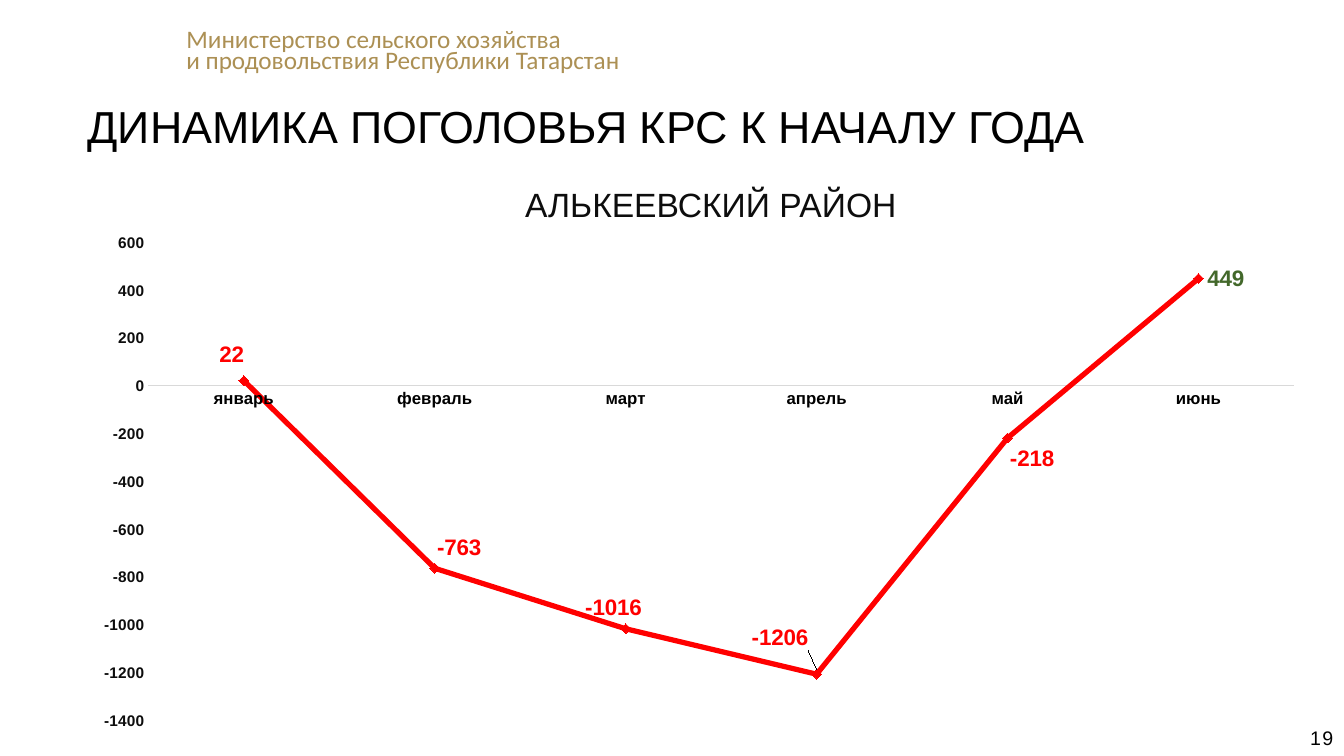
from dataclasses import dataclass

from lxml.etree import SubElement
from pptx import Presentation
from pptx.chart.chart import Chart
from pptx.chart.data import CategoryChartData
from pptx.dml.color import RGBColor
from pptx.enum.chart import (XL_CHART_TYPE, XL_LABEL_POSITION, XL_MARKER_STYLE,
                             XL_TICK_MARK)
from pptx.enum.text import MSO_AUTO_SIZE, PP_ALIGN
from pptx.oxml import parse_xml
from pptx.oxml.ns import nsdecls, qn
from pptx.slide import Slide
from pptx.text.text import Font
from pptx.util import Inches, Pt

BLACK = RGBColor(0x00, 0x00, 0x00)
NEAR_BLACK = RGBColor(0x0D, 0x0D, 0x0D)
GOLD = RGBColor(0xAC, 0x90, 0x54)
RED = RGBColor(0xFF, 0x00, 0x00)
GREEN = RGBColor(0x43, 0x68, 0x2B)
AXIS_GREY = RGBColor(0xD9, 0xD9, 0xD9)


@dataclass
class Caption:
    text: str
    left: float
    top: float
    width: float
    height: float
    size: int
    color: RGBColor
    font: str = "Arial"
    align: PP_ALIGN = PP_ALIGN.LEFT
    wrap: bool = True
    grow: bool = True
    inset: bool = True
    line_spacing: float = 1.0
    indent: float = 0.0
    tracking: int = 0


@dataclass
class Month:
    name: str
    change: int
    label_position: XL_LABEL_POSITION
    shift_x: float = 0.0
    shift_y: float = 0.0
    color: RGBColor = RED


CAPTIONS = [
    Caption("Министерство сельского хозяйства\nи продовольствия Республики Татарстан",
            1.75, 0.26, 4.55, 0.54, 18, GOLD, font="Calibri", wrap=False,
            line_spacing=0.7),
    Caption("ДИНАМИКА ПОГОЛОВЬЯ КРС К НАЧАЛУ ГОДА",
            0.58, 0.93, 12.75, 0.64, 32, BLACK, indent=0.19),
    Caption("АЛЬКЕЕВСКИЙ РАЙОН", 0.58, 1.78, 12.75, 0.5, 24, NEAR_BLACK,
            align=PP_ALIGN.CENTER, indent=0.19),
    Caption("19", 12.98, 7.2, 0.26, 0.23, 14, BLACK, align=PP_ALIGN.CENTER,
            wrap=False, grow=False, inset=False, tracking=100),
]

ABOVE, BELOW = XL_LABEL_POSITION.ABOVE, XL_LABEL_POSITION.BELOW
# Label shifts are fractions of the chart's width and height
MONTHS = [
    Month("январь", 22, ABOVE, -0.01, -0.01),
    Month("февраль", -763, ABOVE, 0.02),
    Month("март", -1016, ABOVE, -0.01),
    Month("апрель", -1206, ABOVE, -0.03, -0.03),
    Month("май", -218, BELOW, 0.02),
    Month("июнь", 449, XL_LABEL_POSITION.RIGHT, color=GREEN),
]


def style_font(font: Font, size: int, color: RGBColor, bold: bool = False,
               name: str = "Arial") -> None:
    font.name = name
    font.size = Pt(size)
    font.bold = bold
    font.color.rgb = color


def add_caption(slide: Slide, caption: Caption) -> None:
    box = slide.shapes.add_textbox(Inches(caption.left), Inches(caption.top),
                                   Inches(caption.width), Inches(caption.height))
    frame = box.text_frame
    frame.word_wrap = caption.wrap
    frame.auto_size = (MSO_AUTO_SIZE.SHAPE_TO_FIT_TEXT if caption.grow
                       else MSO_AUTO_SIZE.NONE)
    if not caption.inset:
        frame.margin_left = frame.margin_right = Inches(0)
        frame.margin_top = frame.margin_bottom = Inches(0)
    frame.text = caption.text
    for paragraph in frame.paragraphs:
        paragraph.alignment = caption.align
        paragraph.line_spacing = caption.line_spacing
        if caption.indent:
            properties = paragraph._p.get_or_add_pPr()
            properties.set("marL", str(Inches(caption.indent)))
            properties.set("indent", "0")
        for run in paragraph.runs:
            style_font(run.font, caption.size, caption.color, name=caption.font)
            if caption.tracking:
                run._r.get_or_add_rPr().set("spc", str(caption.tracking))


def manual_layout(values: dict[str, str | float]):
    layout = parse_xml(f"<c:layout {nsdecls('c')}><c:manualLayout/></c:layout>")
    for tag, value in values.items():
        SubElement(layout[0], qn(f"c:{tag}")).set("val", str(value))
    return layout


def style_axes(chart: Chart) -> None:
    months, heads = chart.category_axis, chart.value_axis
    for axis in (months, heads):
        axis.has_major_gridlines = False
        axis.major_tick_mark = axis.minor_tick_mark = XL_TICK_MARK.NONE
    style_font(months.tick_labels.font, 12, BLACK, bold=True)
    style_font(heads.tick_labels.font, 11, NEAR_BLACK, bold=True)
    months.format.line.color.rgb = AXIS_GREY
    months.format.line.width = Pt(0.75)
    heads.format.line.fill.background()
    heads.minimum_scale, heads.maximum_scale, heads.major_unit = -1400, 600, 200


def style_herd_line(chart: Chart) -> None:
    herd = chart.plots[0].series[0]
    herd.smooth = False
    herd.data_labels.show_value = True
    style_font(herd.data_labels.font, 16, RED, bold=True)
    june = herd.points[len(MONTHS) - 1]
    for part, marker_color in ((herd, RED), (june, GREEN)):
        part.format.line.color.rgb = RED
        part.format.line.width = Pt(3.75)
        part.marker.style = XL_MARKER_STYLE.DIAMOND
        part.marker.size = 7
        part.marker.format.fill.solid()
        part.marker.format.fill.fore_color.rgb = marker_color
        part.marker.format.line.color.rgb = marker_color
    for index, month in enumerate(MONTHS):
        label = herd.points[index].data_label
        style_font(label.font, 16, month.color, bold=True)
        label.position = month.label_position
    for month, label in zip(MONTHS, chart.element.iter(qn("c:dLbl"))):
        if month.shift_x or month.shift_y:
            label.insert(1, manual_layout({"x": month.shift_x, "y": month.shift_y}))


def add_herd_chart(slide: Slide) -> None:
    data = CategoryChartData()
    data.categories = [month.name for month in MONTHS]
    data.add_series("Series 1", [month.change for month in MONTHS])
    chart = slide.shapes.add_chart(XL_CHART_TYPE.LINE_MARKERS, Inches(0.84), Inches(2.29),
                                   Inches(12.14), Inches(5.01), data).chart
    chart.has_legend = False
    chart.has_title = False
    style_font(chart.font, 10, BLACK, name="Calibri")
    chart.plots[0].vary_by_categories = False
    style_axes(chart)
    style_herd_line(chart)
    # Fixed plot area
    plot_area = next(chart.element.iter(qn("c:plotArea")))
    for layout in plot_area.findall(qn("c:layout")):
        plot_area.remove(layout)
    plot_area.insert(0, manual_layout({
        "layoutTarget": "inner", "xMode": "edge", "yMode": "edge",
        "x": 0.052, "y": 0.023, "w": 0.936, "h": 0.947}))


def main() -> None:
    deck = Presentation()
    deck.slide_width, deck.slide_height = Inches(13.33), Inches(7.5)
    slide = deck.slides.add_slide(deck.slide_layouts[6])
    add_herd_chart(slide)
    for caption in CAPTIONS:
        add_caption(slide, caption)
    deck.save("out.pptx")


if __name__ == "__main__":
    main()
